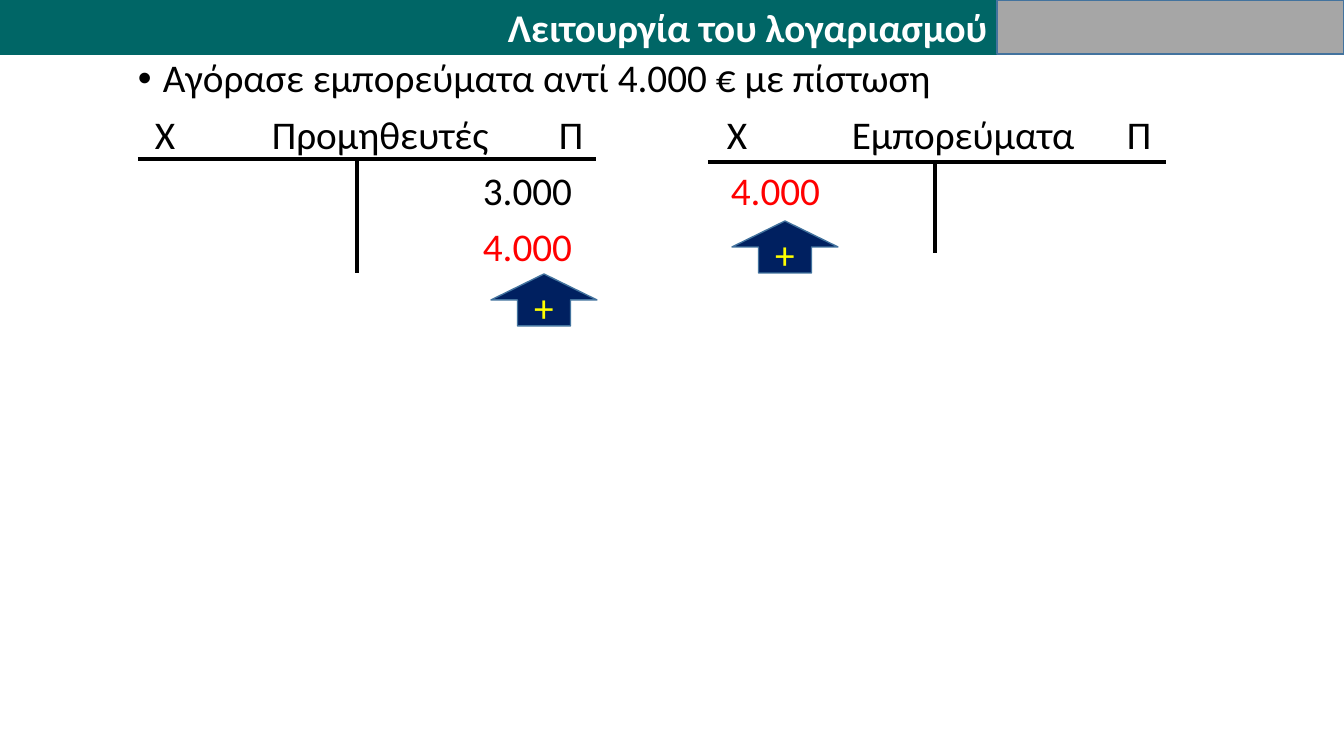
from lxml.etree import SubElement
from pptx import Presentation
from pptx.dml.color import RGBColor
from pptx.enum.shapes import MSO_CONNECTOR, MSO_SHAPE
from pptx.enum.text import MSO_ANCHOR, PP_ALIGN
from pptx.oxml.ns import qn
from pptx.util import Pt

SLIDE_WIDTH, SLIDE_HEIGHT = 1344, 756
SCALE = 12192000 / SLIDE_WIDTH
COLORS = {
    "teal": "006666",
    "gray": "A6A6A6",
    "outline": "43739E",
    "navy": "002060",
    "yellow": "FFFF00",
    "red": "FF0000",
    "black": "000000",
    "white": "FFFFFF",
}
HEADING_TABS = [17, 134, 421, 589, 714, 989]
AMOUNT_TABS = [345, 593]
ROWS = [
    (HEADING_TABS, [("\tΧ\tΠρομηθευτές\tΠ\tΧ\tΕμπορεύματα\tΠ", "black")]),
    (AMOUNT_TABS, [("\t3.000", "black"), ("\t4.000", "red")]),
    (AMOUNT_TABS, [("\t4.000", "red")]),
]


def px(length):
    return round(length * SCALE)


def color(name):
    return RGBColor.from_string(COLORS[name])


def format_font(font, color_name, bold=False):
    font.name = "Calibri"
    font.size = Pt(28)
    font.bold = bold
    font.color.rgb = color(color_name)


def add_block(slide, preset, box, fill, line, text="", text_color="white",
              alignment=PP_ALIGN.CENTER, bold=False):
    shape = slide.shapes.add_shape(preset, *map(px, box))
    shape.shadow.inherit = False
    shape.fill.solid()
    shape.fill.fore_color.rgb = color(fill)
    shape.line.color.rgb = color(line)
    shape.line.width = Pt(1)
    if text:
        text_frame = shape.text_frame
        text_frame.text = text
        text_frame.vertical_anchor = MSO_ANCHOR.MIDDLE
        paragraph = text_frame.paragraphs[0]
        paragraph.alignment = alignment
        format_font(paragraph.runs[0].font, text_color, bold)


def add_line(slide, start_x, start_y, end_x, end_y):
    connector = slide.shapes.add_connector(
        MSO_CONNECTOR.STRAIGHT, px(start_x), px(start_y), px(end_x), px(end_y))
    connector.line.color.rgb = color("black")
    connector.line.width = Pt(2.5)
    SubElement(connector._element.spPr, qn("a:effectLst"))


def add_header(slide, left, top, width, height, title_width):
    add_block(slide, MSO_SHAPE.RECTANGLE, (left, top, title_width, height),
              "teal", "teal", "Λειτουργία του λογαριασμού",
              alignment=PP_ALIGN.RIGHT, bold=True)
    add_block(slide, MSO_SHAPE.RECTANGLE,
              (left + title_width, top, width - title_width, height),
              "gray", "outline")


def add_bullet(paragraph):
    properties = paragraph._p.get_or_add_pPr()
    properties.set("marL", str(px(25)))
    properties.set("indent", str(-px(25)))
    SubElement(properties, qn("a:buFont"), typeface="Arial")
    SubElement(properties, qn("a:buChar"), char="•")


def add_tabs(paragraph, positions):
    tab_list = SubElement(paragraph._p.get_or_add_pPr(), qn("a:tabLst"))
    for position in positions:
        SubElement(tab_list, qn("a:tab"), pos=str(px(position)), algn="l")


def add_body(slide, left, top, width, height):
    text_frame = slide.shapes.add_textbox(
        px(left), px(top), px(width), px(height)).text_frame
    text_frame.word_wrap = True
    text_frame.text = "Αγόρασε εμπορεύματα αντί 4.000 € με πίστωση"
    add_bullet(text_frame.paragraphs[0])
    for tabs, pieces in ROWS:
        paragraph = text_frame.add_paragraph()
        add_tabs(paragraph, tabs)
        paragraph.space_before = Pt(10)
        for text, color_name in pieces:
            run = paragraph.add_run()
            run.text = text
            format_font(run.font, color_name)
    for paragraph in text_frame.paragraphs:
        paragraph.alignment = PP_ALIGN.JUSTIFY
        paragraph.line_spacing = 0.9
    format_font(text_frame.paragraphs[0].runs[0].font, "black")


def add_account(slide, left, top, width, height, stem, arrow_left, arrow_top):
    add_line(slide, left, top, left + width, top)
    add_line(slide, left + stem, top, left + stem, top + height)
    add_block(slide, MSO_SHAPE.UP_ARROW,
              (left + arrow_left, top + arrow_top, 106, 52),
              "navy", "outline", "+", "yellow")


def main():
    presentation = Presentation()
    presentation.slide_width = px(SLIDE_WIDTH)
    presentation.slide_height = px(SLIDE_HEIGHT)
    slide = presentation.slides.add_slide(presentation.slide_layouts[6])
    add_body(slide, 128, 54, 1140, 702)
    add_header(slide, 0, 0, SLIDE_WIDTH, 54, title_width=997)
    add_account(slide, 138, 159, 458, 114, stem=219, arrow_left=353, arrow_top=115)
    add_account(slide, 708, 162, 458, 91, stem=227, arrow_left=24, arrow_top=59)
    presentation.save("out.pptx")


if __name__ == "__main__":
    main()
